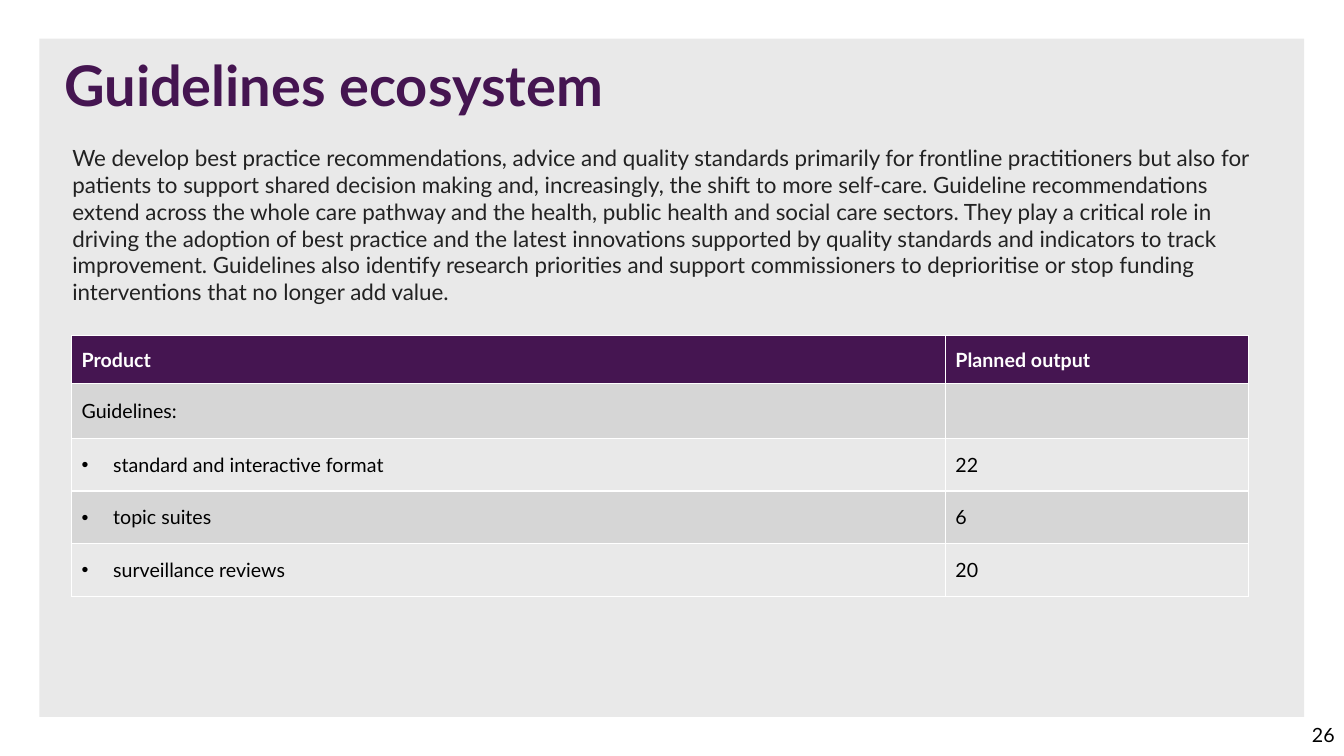
"""Build the guidelines ecosystem slide with its planned output table."""
from lxml.etree import SubElement
from pptx import Presentation
from pptx.dml.color import RGBColor
from pptx.enum.shapes import MSO_SHAPE
from pptx.enum.text import MSO_ANCHOR, PP_ALIGN
from pptx.oxml import parse_xml
from pptx.oxml.ns import nsdecls, qn
from pptx.util import Pt

TITLE = "Guidelines ecosystem"
INTRODUCTION = (
    "We develop best practice recommendations, advice and quality standards primarily for "
    "frontline practitioners but also for patients to support shared decision making and, "
    "increasingly, the shift to more self-care. Guideline recommendations extend across the "
    "whole care pathway and the health, public health and social care sectors. They play a "
    "critical role in driving the adoption of best practice and the latest innovations "
    "supported by quality standards and indicators to track improvement. Guidelines also "
    "identify research priorities and support commissioners to deprioritise or stop funding "
    "interventions that no longer add value."
)
PAGE_NUMBER = "26"
HEADER = ("Product", "Planned output")
GUIDELINES = ("Guidelines:", "")
PRODUCTS = [
    ("standard and interactive format", "22"),
    ("topic suites", "6"),
    ("surveillance reviews", "20"),
]

PURPLE, WHITE, BLACK = "451551", "FFFFFF", "000000"
PANEL_GREY, BAND_GREY = "E9E9E9", "D6D6D6"
TITLE_FORMAT = {"size": 40, "bold": True, "color": PURPLE}
BODY_FORMAT = {"size": 16, "bold": False, "color": "222222"}
HEADER_FORMAT = {"size": 14, "bold": True, "color": WHITE}
PLAIN_FORMAT = {"size": 14, "bold": False, "color": BLACK}

PANEL_BOX = (28.2, 27.6, 903.4, 484.4)
TITLE_BOX = (38.9, 38.2, 876.2, 100.8)
BODY_BOX = (44.6, 99.4, 857.5, 140)
PAGE_NUMBER_BOX = (744.5, 510.5, 216, 28.8)
TABLE_LEFT, TABLE_TOP = 51.1, 239.8
COLUMN_WIDTHS = (624.2, 216.7)
ROW_HEIGHTS = (34.4, 38.9, 37.6, 37.6, 37.6)
BULLET_INDENT = 22.5


def points(values):
    return [Pt(value) for value in values]


def paint(target, color):
    target.solid()
    target.fore_color.rgb = RGBColor.from_string(color)


def write(paragraph, text, text_format):
    paragraph.text = text
    font = paragraph.font
    settings = {"name": "Lato", "size": Pt(text_format["size"]), "bold": text_format["bold"]}
    for name, value in settings.items():
        setattr(font, name, value)
    paint(font.fill, text_format["color"])


def add_text(slide, box, text, text_format, anchor=MSO_ANCHOR.TOP, **paragraph_format):
    frame = slide.shapes.add_textbox(*points(box)).text_frame
    frame.word_wrap = True
    frame.vertical_anchor = anchor
    paragraph = frame.paragraphs[0]
    for name, value in paragraph_format.items():
        setattr(paragraph, name, value)
    write(paragraph, text, text_format)


def add_borders(cell):
    properties = cell._tc.get_or_add_tcPr()
    for index, side in enumerate(("lnL", "lnR", "lnT", "lnB")):
        properties.insert(index, parse_xml(
            f'<a:{side} {nsdecls("a")} w="{Pt(1)}"><a:solidFill>'
            f'<a:srgbClr val="{WHITE}"/></a:solidFill></a:{side}>'))


def add_bullet(paragraph):
    properties = paragraph._p.get_or_add_pPr()
    properties.set("marL", str(Pt(BULLET_INDENT)))
    properties.set("indent", str(-Pt(BULLET_INDENT)))
    SubElement(properties, qn("a:buFont")).set("typeface", "Arial")
    SubElement(properties, qn("a:buChar")).set("char", "•")


def add_output_table(slide):
    rows = [HEADER, GUIDELINES, *PRODUCTS]
    table = slide.shapes.add_table(
        len(rows), len(HEADER),
        *points((TABLE_LEFT, TABLE_TOP, sum(COLUMN_WIDTHS), sum(ROW_HEIGHTS)))).table
    for column, width in zip(table.columns, COLUMN_WIDTHS):
        column.width = Pt(width)
    for row_index, (row, height) in enumerate(zip(rows, ROW_HEIGHTS)):
        table.rows[row_index].height = Pt(height)
        band = BAND_GREY if row_index % 2 else PANEL_GREY
        fill = band if row_index else PURPLE
        for column_index, text in enumerate(row):
            cell = table.cell(row_index, column_index)
            cell.vertical_anchor = MSO_ANCHOR.MIDDLE
            paint(cell.fill, fill)
            add_borders(cell)
            paragraph = cell.text_frame.paragraphs[0]
            if row in PRODUCTS and column_index == 0:
                add_bullet(paragraph)
            write(paragraph, text, PLAIN_FORMAT if row_index else HEADER_FORMAT)


def main():
    presentation = Presentation()
    presentation.slide_width, presentation.slide_height = Pt(960), Pt(540)
    slide = presentation.slides.add_slide(presentation.slide_layouts[6])
    panel = slide.shapes.add_shape(MSO_SHAPE.RECTANGLE, *points(PANEL_BOX))
    panel.shadow.inherit = False
    paint(panel.fill, PANEL_GREY)
    panel.line.fill.background()
    add_text(slide, TITLE_BOX, TITLE, TITLE_FORMAT, line_spacing=0.9)
    add_text(slide, BODY_BOX, INTRODUCTION, BODY_FORMAT)
    add_output_table(slide)
    add_text(slide, PAGE_NUMBER_BOX, PAGE_NUMBER, PLAIN_FORMAT,
             MSO_ANCHOR.MIDDLE, alignment=PP_ALIGN.RIGHT)
    presentation.save("out.pptx")


if __name__ == "__main__":
    main()
